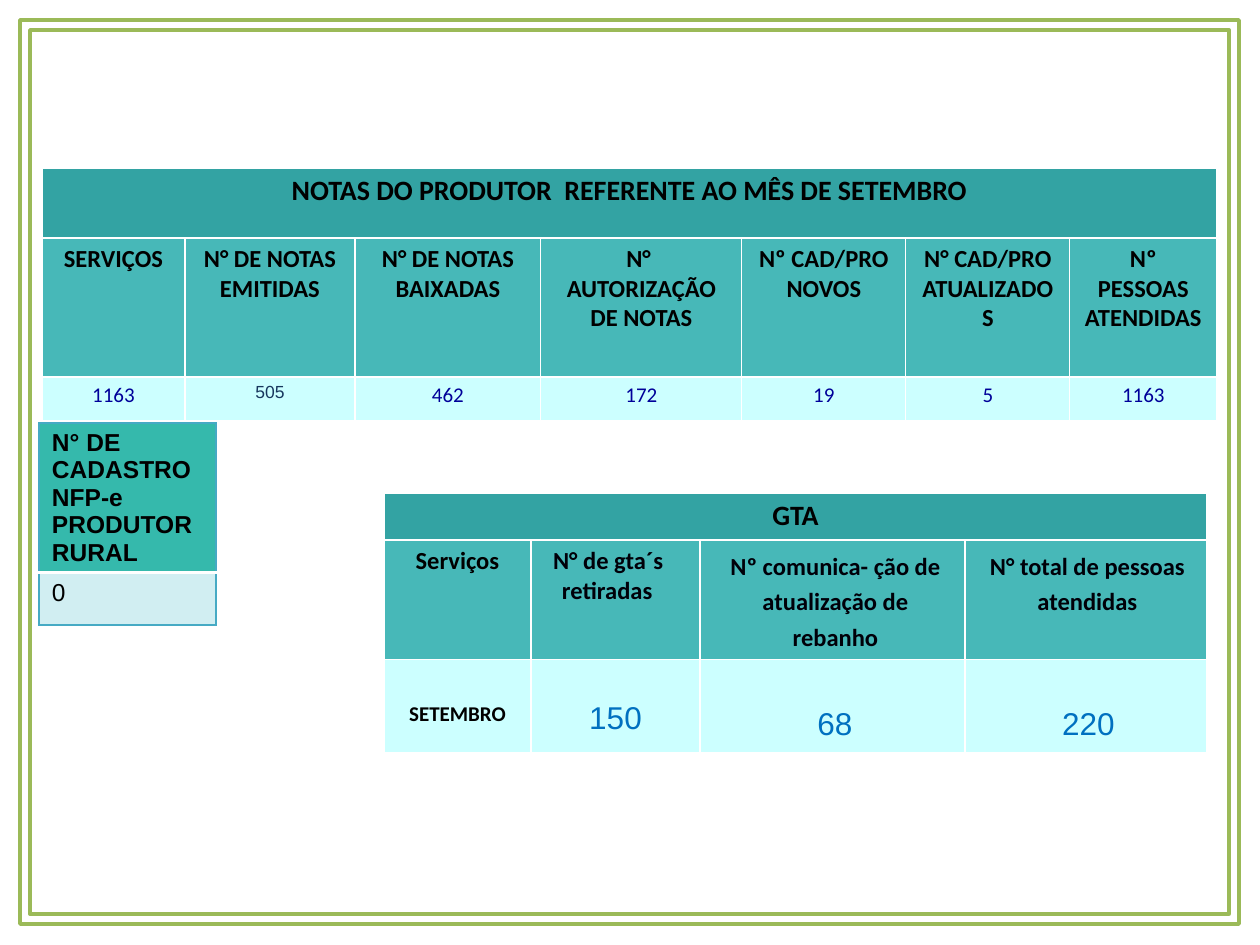
from lxml.etree import SubElement as Sub
from pptx import Presentation
from pptx.dml.color import RGBColor as RGB
from pptx.enum.text import PP_ALIGN as AL
from pptx.oxml.ns import qn
from pptx.util import Pt

SCALE = 914400 / 126
HUES = {
    "frame": "9BBA58", "title": "33A3A3", "head": "47B8B8", "data": "CCFFFF",
    "white": "FFFFFF", "black": "000000", "ink": "000009", "navy": "000099",
    "slate": "17375E", "blue": "0070C0", "green": "35B9AC", "pale": "D1EEF2",
    "edge": "46AAC4",
}
GRID = {side: ("white", 0.75) for side in "LRTB"}
SIDES = {side: ("edge", 0.75) for side in "LRTB"}


def px(n):
    return round(n * SCALE)


def hue(name):
    return RGB.from_string(HUES[name])


def border(cell, lines):
    props = cell._tc.get_or_add_tcPr()
    for side, (name, width) in lines.items():
        line = Sub(props, qn(f"a:ln{side}"), w=str(Pt(width)))
        fill = Sub(line, qn("a:solidFill"))
        Sub(fill, qn("a:srgbClr"), val=HUES[name])


def write(cell, text, fill, size, color="black", font="Calibri", bold=True,
          align=AL.CENTER, left=0, first=0, space=None, top=6, lines=GRID):
    border(cell, lines)
    cell.fill.solid()
    cell.fill.fore_color.rgb = hue(fill)
    cell.margin_left = cell.margin_right = px(13)
    cell.margin_top, cell.margin_bottom = px(top), px(6)
    cell.text = text
    para = cell.text_frame.paragraphs[0]
    para.alignment = align
    para.line_spacing = space
    props = para._p.get_or_add_pPr()
    props.set("marL", str(px(left)))
    props.set("indent", str(px(first)))
    para.font.name, para.font.size, para.font.bold = font, Pt(size), bold
    para.font.color.rgb = hue(color)


def grid(slide, x, y, cols, rows):
    table = slide.shapes.add_table(
        len(rows), len(cols), px(x), px(y), px(sum(cols)), px(sum(rows))).table
    table.first_row = table.horz_banding = False
    for col, width in zip(table.columns, cols):
        col.width = px(width)
    for row, height in zip(table.rows, rows):
        row.height = px(height)
    return table


def title(table, text):
    last = len(table.columns) - 1
    table.cell(0, 0).merge(table.cell(0, last))
    write(table.cell(0, 0), text, "title", 16)


def frame(slide, x, y, w, h, gap):
    def ring(d):
        left, top, right, low = x + d, y + d, x + w - d, y + h - d
        return [(left, low), (right, low), (right, top), (left, top)]

    outer, inner = ring(0), ring(gap)
    path = slide.shapes.build_freeform(*outer[0], scale=SCALE)
    path.add_line_segments(outer[1:], close=True)
    path.move_to(*inner[0])
    path.add_line_segments(inner[1:], close=True)
    shape = path.convert_to_shape()
    shape.shadow.inherit = False
    shape.fill.background()
    shape.line.color.rgb = hue("frame")
    shape.line.width = Pt(2)
    Sub(shape.line._get_or_add_ln(), qn("a:round"))


def permits(slide, x, y):
    table = grid(slide, x, y, [147, 169, 265, 242], [47, 119, 93])
    title(table, "GTA")
    heads = [
        ("Serviços", {}),
        ("N° de gta´s retiradas",
         dict(color="ink", align=AL.LEFT, left=18, first=-9)),
        ("Nº comunica- ção de atualização de rebanho",
         dict(color="ink", left=6, space=1.2)),
        ("N° total de pessoas atendidas",
         dict(color="ink", left=3, space=1.2)),
    ]
    for i, (text, look) in enumerate(heads):
        write(table.cell(1, i), text, "head", 14, **look)
    write(table.cell(2, 0), "SETEMBRO", "data", 12, top=42)
    facts = [("150", {}), ("68", dict(left=5, space=1.17)),
             ("220", dict(left=5, space=1.17))]
    for i, (text, look) in enumerate(facts, 1):
        write(table.cell(2, i), text, "data", 18, "blue", "Arial", False,
              top=42, **look)


def notes(slide, x, y):
    table = grid(slide, x, y, [143, 170, 186, 201, 164, 164, 147],
                 [70, 139, 44])
    title(table, "NOTAS DO PRODUTOR  REFERENTE AO MÊS DE SETEMBRO")
    facts = [
        ("SERVIÇOS", "1163"), ("N° DE NOTAS EMITIDAS", "505"),
        ("N° DE NOTAS BAIXADAS", "462"),
        ("N°  AUTORIZAÇÃO DE NOTAS", "172"), ("Nº CAD/PRO NOVOS", "19"),
        ("N° CAD/PRO ATUALIZADOS", "5"), ("Nº PESSOAS ATENDIDAS", "1163"),
    ]
    for i, (head, value) in enumerate(facts):
        write(table.cell(1, i), head, "head", 14)
        look = (10, "slate", "Arial") if i == 1 else (12, "navy", "Calibri")
        write(table.cell(2, i), value, "data", *look, bold=False)


def records(slide, x, y):
    table = grid(slide, x, y, [177], [150, 52])
    rule = ("white", 1.98)
    write(table.cell(0, 0), "N° DE CADASTRO  NFP-e  PRODUTOR RURAL", "green",
          14, font="Arial", align=AL.LEFT, lines={**SIDES, "B": rule})
    write(table.cell(1, 0), "0", "pale", 14, font="Arial", bold=False,
          align=AL.LEFT, lines={**SIDES, "T": rule})


def main():
    deck = Presentation()
    deck.slide_width, deck.slide_height = px(1260), px(945)
    slide = deck.slides.add_slide(deck.slide_layouts[6])
    frame(slide, 20, 20, 1219, 904, 10)
    permits(slide, 384, 493)
    notes(slide, 42, 168)
    records(slide, 39, 423)
    deck.save("out.pptx")


if __name__ == "__main__":
    main()
